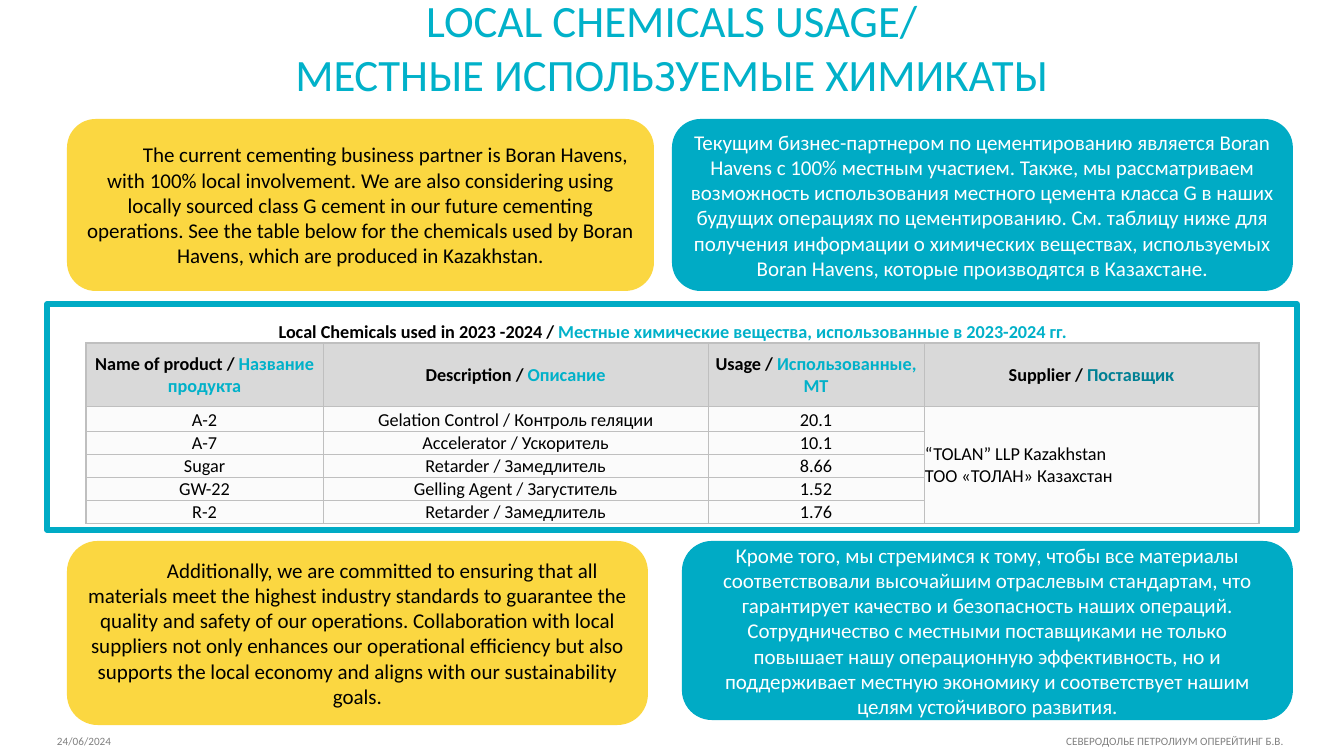
import lxml.etree
import pptx
import pptx.dml.color
import pptx.enum.shapes
import pptx.enum.text
import pptx.oxml.ns
import pptx.util

PX = 914400 / 100.8
FONT = "Calibri"
BLACK, WHITE, GREY = "000000", "FFFFFF", "808080"
YELLOW, TEAL, CYAN, DARK_TEAL = "FBD741", "00ABC5", "01B1C9", "008094"
HEADER_FILL, BODY_FILL, BORDER = "D9D9D9", "FBFBFB", "BFBFBF"

HEADING = ["LOCAL CHEMICALS USAGE/", "МЕСТНЫЕ ИСПОЛЬЗУЕМЫЕ ХИМИКАТЫ"]
FOOTER = "24/06/2024\tСЕВЕРОДОЛЬЕ ПЕТРОЛИУМ ОПЕРЕЙТИНГ Б.В."

# (left, top, width, height), fill, text colour, first-line indent, text
PANELS = [
    ((67, 119, 587, 172), YELLOW, BLACK, 50,
     "The current cementing business partner is Boran Havens, with 100% local involvement. "
     "We are also considering using locally sourced class G cement in our future cementing "
     "operations. See the table below for the chemicals used by Boran Havens, which are "
     "produced in Kazakhstan."),
    ((672, 119, 621, 172), TEAL, WHITE, 0,
     "Текущим бизнес-партнером по цементированию является Boran Havens с 100% местным "
     "участием. Также, мы рассматриваем возможность использования местного цемента класса G "
     "в наших будущих операциях по цементированию. См. таблицу ниже для получения информации "
     "о химических веществах, используемых Boran Havens, которые производятся в Казахстане."),
    ((67, 541, 581, 184), YELLOW, BLACK, 50,
     "Additionally, we are committed to ensuring that all materials meet the highest industry "
     "standards to guarantee the quality and safety of our operations. Collaboration with "
     "local suppliers not only enhances our operational efficiency but also supports the "
     "local economy and aligns with our sustainability goals."),
    ((682, 541, 611, 179), TEAL, WHITE, 0,
     "Кроме того, мы стремимся к тому, чтобы все материалы соответствовали высочайшим "
     "отраслевым стандартам, что гарантирует качество и безопасность наших операций. "
     "Сотрудничество с местными поставщиками не только повышает нашу операционную "
     "эффективность, но и поддерживает местную экономику и соответствует нашим целям "
     "устойчивого развития."),
]

FRAME = (47, 304, 1250, 226)
TABLE_LEFT, TABLE_TOP = 86, 312
COLUMN_WIDTHS = [237, 385, 216, 335]
ROW_HEIGHTS = [31, 63, 25, 23, 23, 23, 23]
CAPTION = ("Local Chemicals used in 2023 -2024 / ",
           "Местные химические вещества, использованные в 2023-2024 гг.", CYAN)
COLUMN_HEADS = [
    ("Name of product / ", "Название продукта", CYAN),
    ("Description / ", "Описание", CYAN),
    ("Usage / ", "Использованные, MT", CYAN),
    ("Supplier / ", "Поставщик", DARK_TEAL),
]
CHEMICALS = [
    ("A-2", "Gelation Control / Контроль геляции", "20.1"),
    ("A-7", "Accelerator / Ускоритель", "10.1"),
    ("Sugar", "Retarder / Замедлитель", "8.66"),
    ("GW-22", "Gelling Agent / Загуститель", "1.52"),
    ("R-2", "Retarder / Замедлитель", "1.76"),
]
SUPPLIER = ["“TOLAN” LLP Kazakhstan", "ТОО «ТОЛАН» Казахстан"]

ALIGN = pptx.enum.text.PP_ALIGN
ANCHOR = pptx.enum.text.MSO_ANCHOR
SHAPES = pptx.enum.shapes.MSO_SHAPE


def px(length):
    return pptx.util.Emu(round(length * PX))


def box(bounds):
    return [px(length) for length in bounds]


def rgb(colour):
    return pptx.dml.color.RGBColor.from_string(colour)


def apply(target, **values):
    for name, value in values.items():
        setattr(target, name, value)


def write(paragraph, runs, size, align=ALIGN.CENTER, bold=False):
    """Fill a paragraph with (text, colour) runs."""
    paragraph.alignment = align
    for text, colour in runs:
        run = paragraph.add_run()
        run.text = text
        apply(run.font, name=FONT, size=pptx.util.Pt(size), bold=bold)
        run.font.color.rgb = rgb(colour)


def write_lines(frame, lines, colour, size, align):
    for number, line in enumerate(lines):
        paragraph = frame.add_paragraph() if number else frame.paragraphs[0]
        write(paragraph, [(line, colour)], size, align)


def add_heading(slide):
    heading = slide.shapes.title
    left, top, width, height = box((0, -12, 1344, 119))
    apply(heading, left=left, top=top, width=width, height=height)
    apply(heading.text_frame, word_wrap=True, vertical_anchor=ANCHOR.TOP,
          auto_size=pptx.enum.text.MSO_AUTO_SIZE.NONE)
    write_lines(heading.text_frame, HEADING, CYAN, 32, ALIGN.CENTER)


def add_panel(slide, bounds, fill, colour, indent, text):
    panel = slide.shapes.add_shape(SHAPES.ROUNDED_RECTANGLE, *box(bounds))
    panel.shadow.inherit = False
    panel.fill.solid()
    panel.fill.fore_color.rgb = rgb(fill)
    panel.line.fill.background()
    apply(panel.text_frame, word_wrap=True, vertical_anchor=ANCHOR.MIDDLE)
    paragraph = panel.text_frame.paragraphs[0]
    paragraph._p.get_or_add_pPr().set("indent", str(px(indent)))
    write(paragraph, [(text, colour)], 15)


def add_frame(slide):
    frame = slide.shapes.add_shape(SHAPES.RECTANGLE, *box(FRAME))
    frame.shadow.inherit = False
    frame.fill.background()
    frame.line.color.rgb = rgb(TEAL)
    frame.line.width = pptx.util.Pt(3.75)


def set_borders(cell, widths):
    """Draw the cell's sides from a dict of widths in points, 0 meaning no line."""
    properties = cell._tc.get_or_add_tcPr()
    for side in "LRTB":
        line = lxml.etree.SubElement(properties, pptx.oxml.ns.qn(f"a:ln{side}"))
        if not widths[side]:
            lxml.etree.SubElement(line, pptx.oxml.ns.qn("a:noFill"))
            continue
        line.set("w", str(pptx.util.Pt(widths[side])))
        fill = lxml.etree.SubElement(line, pptx.oxml.ns.qn("a:solidFill"))
        lxml.etree.SubElement(fill, pptx.oxml.ns.qn("a:srgbClr"), val=BORDER)


def style_cell(cell, row, column):
    last_row, last_column = len(ROW_HEIGHTS) - 1, len(COLUMN_WIDTHS) - 1
    if row == 0:
        widths = {"L": 0, "R": 0, "T": 0, "B": 1}
    else:
        outer = {"L": column == 0, "R": column == last_column,
                 "T": row == 1, "B": row == last_row}
        widths = {side: 1 if edge else 0.5 for side, edge in outer.items()}
    set_borders(cell, widths)
    if row == 0:
        cell.fill.background()
    else:
        cell.fill.solid()
        cell.fill.fore_color.rgb = rgb(HEADER_FILL if row == 1 else BODY_FILL)
    middle = row == 1 or column == last_column and row > 1
    apply(cell, margin_left=px(1), margin_right=px(1), margin_top=px(1), margin_bottom=0,
          vertical_anchor=ANCHOR.MIDDLE if middle else ANCHOR.BOTTOM)


def add_chemicals_table(slide):
    table = slide.shapes.add_table(
        len(ROW_HEIGHTS), len(COLUMN_WIDTHS),
        *box((TABLE_LEFT, TABLE_TOP, sum(COLUMN_WIDTHS), sum(ROW_HEIGHTS)))).table
    apply(table, first_row=False, horz_banding=False)
    for column, width in enumerate(COLUMN_WIDTHS):
        table.columns[column].width = px(width)
    for row, height in enumerate(ROW_HEIGHTS):
        table.rows[row].height = px(height)
        for column in range(len(COLUMN_WIDTHS)):
            style_cell(table.cell(row, column), row, column)
    table.cell(0, 0).merge(table.cell(0, 3))
    table.cell(2, 3).merge(table.cell(6, 3))

    bilingual = [(0, 0, CAPTION)] + [(1, column, head) for column, head in enumerate(COLUMN_HEADS)]
    for row, column, (english, russian, colour) in bilingual:
        write(table.cell(row, column).text_frame.paragraphs[0],
              [(english, BLACK), (russian, colour)], 13, bold=True)
    for row, chemical in enumerate(CHEMICALS, 2):
        for column, text in enumerate(chemical):
            write(table.cell(row, column).text_frame.paragraphs[0], [(text, BLACK)], 13)
    write_lines(table.cell(2, 3).text_frame, SUPPLIER, BLACK, 13, ALIGN.LEFT)


def add_footer(slide):
    footer = slide.shapes.add_textbox(*box((57, 729, 1240, 27)))
    apply(footer.text_frame, word_wrap=True, margin_left=0, margin_right=0)
    paragraph = footer.text_frame.paragraphs[0]
    tabs = lxml.etree.SubElement(paragraph._p.get_or_add_pPr(), pptx.oxml.ns.qn("a:tabLst"))
    lxml.etree.SubElement(tabs, pptx.oxml.ns.qn("a:tab"), pos=str(px(1227)), algn="r")
    write(paragraph, [(FOOTER, GREY)], 8, ALIGN.LEFT)


def main():
    deck = pptx.Presentation()
    apply(deck, slide_width=px(1344), slide_height=px(756))
    slide = deck.slides.add_slide(deck.slide_layouts[5])
    add_heading(slide)
    for panel in PANELS:
        add_panel(slide, *panel)
    add_frame(slide)
    add_chemicals_table(slide)
    add_footer(slide)
    deck.save("out.pptx")


if __name__ == "__main__":
    main()
